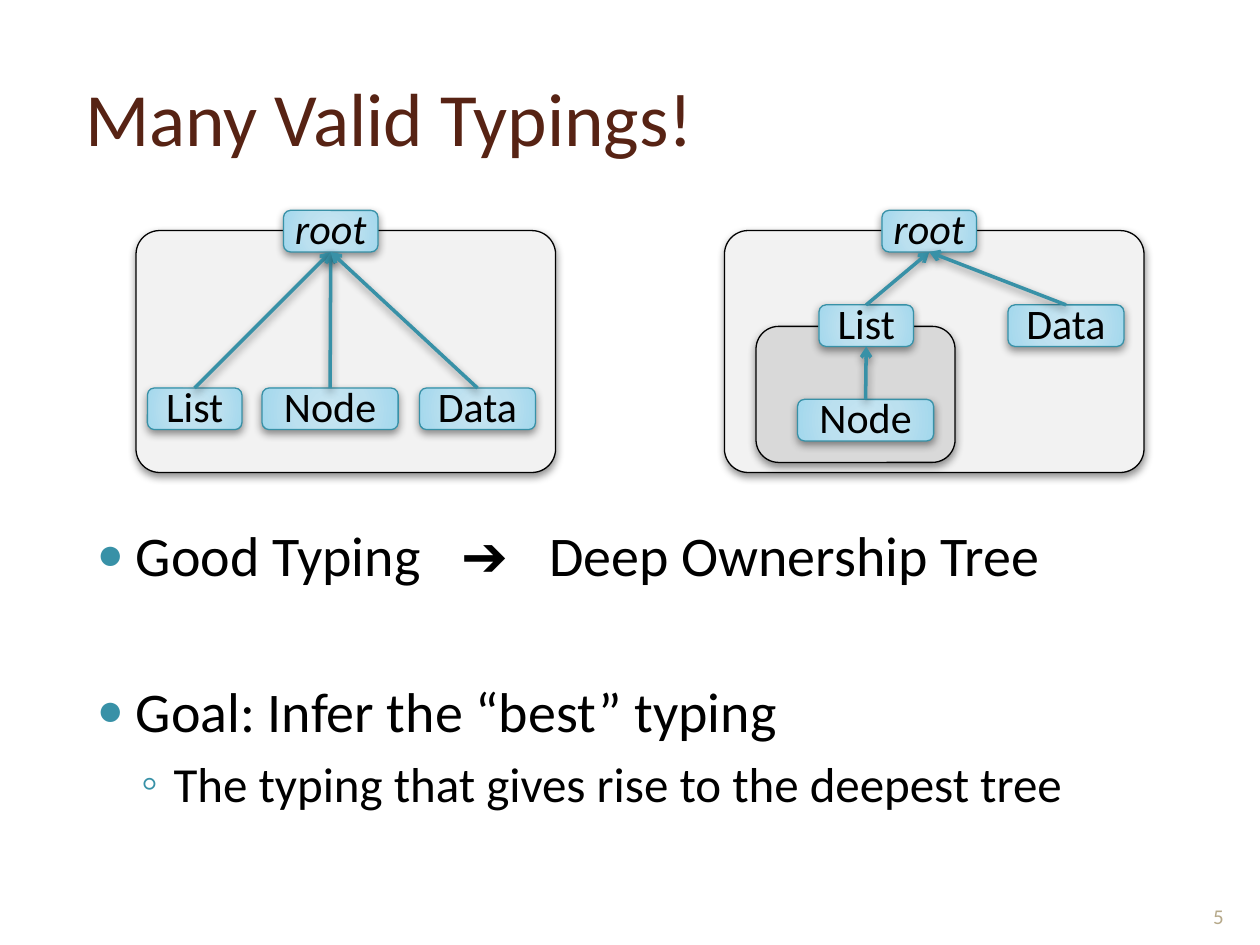
"""Build a slide that compares a flat and a deep ownership tree."""
from typing import NamedTuple

from pptx import Presentation
from pptx.dml.color import RGBColor
from pptx.enum import shapes, text
from pptx.oxml import parse_xml
from pptx.oxml.ns import nsdecls, qn
from pptx.util import Inches, Pt

COLORS = {
    "title": "572314",
    "ink": "000000",
    "accent": "3891A7",
    "outer": "F2F2F2",
    "inner": "D9D9D9",
    "number": "B6A98A",
}
NODE_STOPS = {0: "C9E6F2", 50: "BBE0EF", 97: "A4D8ED", 100: "9BD7EE"}
NODE_HEIGHT = 0.33


class Domain(NamedTuple):
    left: float
    top: float
    width: float
    height: float
    color: str
    rounding: float


class Node(NamedTuple):
    label: str
    left: float
    top: float
    width: float
    parent: int | None = None

    @property
    def center(self) -> float:
        return self.left + self.width / 2


class Tree(NamedTuple):
    domains: list[Domain]
    nodes: list[Node]


class Bullet(NamedTuple):
    pieces: list[str]
    size: float
    symbol: str
    scale: int
    margin: float
    hanging: float
    before: float


TREES = [
    Tree(
        [Domain(1.08, 1.83, 3.33, 1.92, "outer", 0.098)],
        [
            Node("root", 2.25, 1.67, 0.75),
            Node("List", 1.17, 3.08, 0.75, 0),
            Node("Node", 2.08, 3.08, 1.08, 0),
            Node("Data", 3.33, 3.08, 0.92, 0),
        ],
    ),
    Tree(
        [
            Domain(5.75, 1.83, 3.33, 1.92, "outer", 0.098),
            Domain(6, 2.59, 1.58, 1.08, "inner", 0.167),
        ],
        [
            Node("root", 7, 1.67, 0.75),
            Node("List", 6.5, 2.42, 0.75, 0),
            Node("Node", 6.33, 3.17, 1.08, 1),
            Node("Data", 8, 2.42, 0.92, 0),
        ],
    ),
]
BULLETS = [
    Bullet(["Good Typing", "➔", "Deep Ownership Tree"], 32, "●", 80, 0.4, 0.31, 0),
    Bullet(["Goal: Infer the “best” typing"], 32, "●", 80, 0.4, 0.31, 51),
    Bullet(["The typing that gives rise to the deepest tree"], 28, "◦", 100, 0.7, 0.26, 5.5),
]


def rgb(name: str) -> RGBColor:
    """Return a named colour."""
    return RGBColor.from_string(COLORS[name])


def write(paragraph, content: str, *, size: float, color: str = "ink",
          font: str = "Calibri", italic: bool = False, spacing: float = 0) -> None:
    """Add a formatted run to a paragraph."""
    run = paragraph.add_run()
    run.text = content
    run.font.size = Pt(size)
    run.font.name = font
    run.font.italic = italic
    run.font.color.rgb = rgb(color)
    if spacing:
        run.font._element.set("spc", str(round(spacing * 100)))


def add_frame(slide, left: float, top: float, width: float, height: float, anchor):
    """Add a wrapping text box and return its text frame."""
    frame = slide.shapes.add_textbox(
        Inches(left), Inches(top), Inches(width), Inches(height)).text_frame
    frame.word_wrap = True
    frame.vertical_anchor = anchor
    return frame


def add_shadow(item) -> None:
    """Give a shape or connector a soft shadow below it."""
    item._element.spPr.append(parse_xml(
        f'<a:effectLst {nsdecls("a")}><a:outerShdw blurRad="{Pt(5)}" dist="{Pt(2)}" '
        f'dir="5400000" rotWithShape="0"><a:srgbClr val="{COLORS["ink"]}">'
        '<a:alpha val="43000"/></a:srgbClr></a:outerShdw></a:effectLst>'))


def add_rounded(slide, left: float, top: float, width: float, height: float, line: str):
    """Add an outlined rounded rectangle."""
    box = slide.shapes.add_shape(
        shapes.MSO_SHAPE.ROUNDED_RECTANGLE,
        Inches(left), Inches(top), Inches(width), Inches(height))
    box.line.color.rgb = rgb(line)
    box.line.width = Pt(0.75)
    add_shadow(box)
    return box


def draw_domain(slide, domain: Domain) -> None:
    """Draw an ownership domain."""
    box = add_rounded(slide, *domain[:4], "ink")
    box.adjustments[0] = domain.rounding
    box.fill.solid()
    box.fill.fore_color.rgb = rgb(domain.color)


def draw_node(slide, node: Node) -> None:
    """Draw a labelled node with a radial gradient."""
    box = add_rounded(slide, node.left, node.top, node.width, NODE_HEIGHT, "accent")
    stops = "".join(
        f'<a:gs pos="{place * 1000}"><a:srgbClr val="{color}"/></a:gs>'
        for place, color in NODE_STOPS.items())
    box._element.spPr.find(qn("a:prstGeom")).addnext(parse_xml(
        f'<a:gradFill {nsdecls("a")} rotWithShape="1"><a:gsLst>{stops}</a:gsLst>'
        '<a:path path="circle"><a:fillToRect l="50000" t="50000" r="50000" b="50000"/>'
        '</a:path></a:gradFill>'))
    frame = box.text_frame
    frame.margin_left = frame.margin_right = frame.margin_top = frame.margin_bottom = 0
    frame.vertical_anchor = text.MSO_ANCHOR.BOTTOM
    label = frame.paragraphs[0]
    label.alignment = text.PP_ALIGN.CENTER
    label.line_spacing = 0.5
    write(label, node.label, size=24, italic=node.parent is None)


def draw_arrow(slide, child: Node, parent: Node) -> None:
    """Draw an arrow from a child up to its owner."""
    arrow = slide.shapes.add_connector(
        shapes.MSO_CONNECTOR.STRAIGHT, Inches(child.center), Inches(child.top),
        Inches(parent.center), Inches(parent.top + NODE_HEIGHT))
    arrow.line.color.rgb = rgb("accent")
    arrow.line.width = Pt(2)
    arrow.line._ln.append(parse_xml(f'<a:tailEnd {nsdecls("a")} type="arrow"/>'))
    add_shadow(arrow)


def draw_tree(slide, tree: Tree) -> None:
    """Draw the domains, nodes and arrows of a tree."""
    for domain in tree.domains:
        draw_domain(slide, domain)
    for node in tree.nodes:
        draw_node(slide, node)
    for node in tree.nodes:
        if node.parent is not None:
            draw_arrow(slide, node, tree.nodes[node.parent])


def write_bullet(paragraph, bullet: Bullet) -> None:
    """Fill a paragraph with a bulleted line."""
    paragraph.space_before = Pt(bullet.before)
    properties = paragraph._p.get_or_add_pPr()
    properties.set("marL", str(Inches(bullet.margin)))
    properties.set("indent", str(-Inches(bullet.hanging)))
    for tag in (f'<a:buClr {{}}><a:srgbClr val="{COLORS["accent"]}"/></a:buClr>',
                f'<a:buSzPct {{}} val="{bullet.scale * 1000}"/>',
                '<a:buFont {} typeface="Arial"/>',
                f'<a:buChar {{}} char="{bullet.symbol}"/>'):
        properties.append(parse_xml(tag.format(nsdecls("a"))))
    for index, piece in enumerate(bullet.pieces):
        if index:
            write(paragraph, " ", size=bullet.size, spacing=16)
        write(paragraph, piece, size=bullet.size, font="Arial" if piece == "➔" else "Calibri")


def main() -> None:
    """Build and save the slide."""
    deck = Presentation()
    deck.slide_width, deck.slide_height = Inches(10), Inches(7.5)
    slide = deck.slides.add_slide(deck.slide_layouts[6])
    title = add_frame(slide, 0.58, 0.3, 8.87, 1.25, text.MSO_ANCHOR.MIDDLE)
    write(title.paragraphs[0], "Many Valid Typings!", size=43, color="title")
    for tree in TREES:
        draw_tree(slide, tree)
    body = add_frame(slide, 0.58, 4.08, 8.87, 3.08, text.MSO_ANCHOR.TOP)
    for index, bullet in enumerate(BULLETS):
        write_bullet(body.add_paragraph() if index else body.paragraphs[0], bullet)
    number = add_frame(slide, 9.42, 6.9, 0.5, 0.52, text.MSO_ANCHOR.BOTTOM).paragraphs[0]
    number.alignment = text.PP_ALIGN.CENTER
    write(number, "5", size=12, color="number")
    deck.save("out.pptx")


if __name__ == "__main__":
    main()
